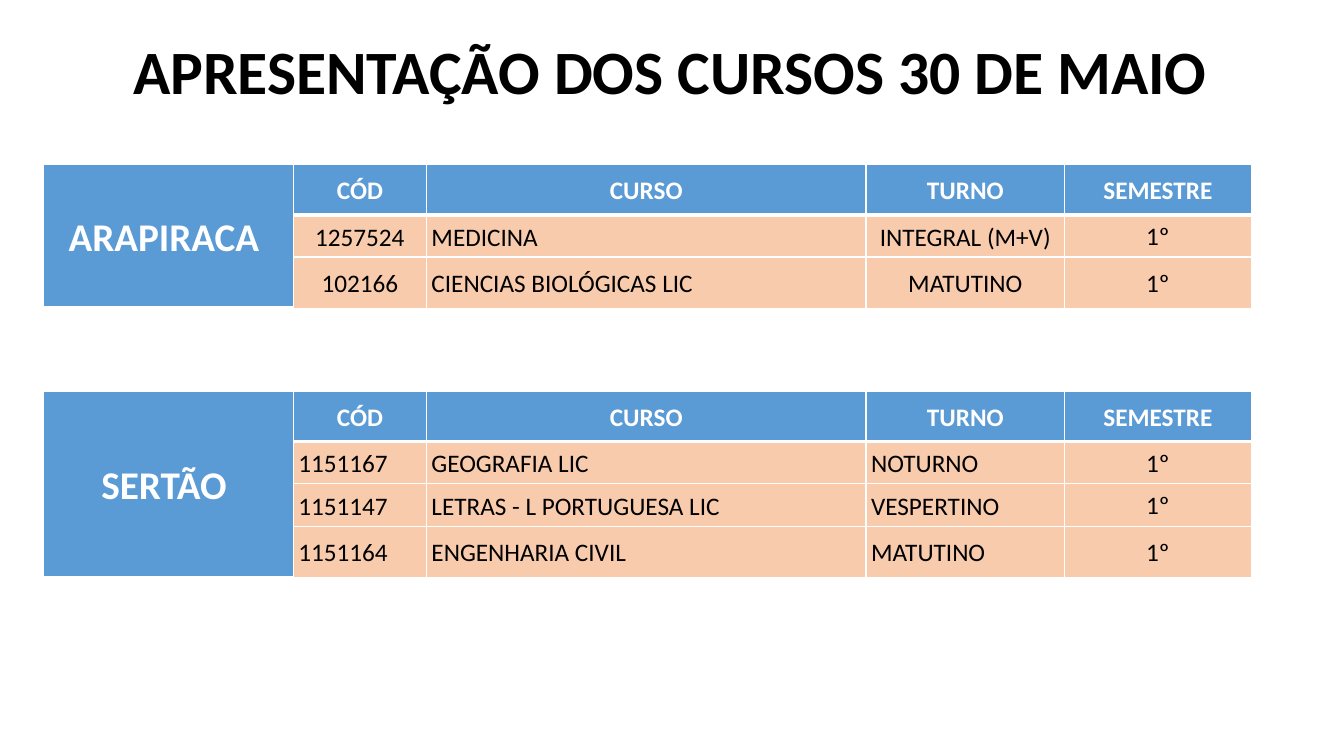
from dataclasses import dataclass

from lxml.etree import SubElement
from pptx import Presentation
from pptx.dml.color import RGBColor
from pptx.enum.text import MSO_ANCHOR as Anchor, MSO_AUTO_SIZE as AutoSize, PP_ALIGN as Align
from pptx.oxml.ns import qn
from pptx.slide import Slide
from pptx.table import _Cell as Cell
from pptx.text.text import TextFrame
from pptx.util import Inches, Pt


@dataclass(frozen=True)
class Theme:
    font: str = "Calibri"
    black: str = "000000"
    white: str = "FFFFFF"
    header: str = "5B9BD5"
    body: str = "F8CBAD"
    title_size: int = 44
    campus_size: int = 28
    table_size: int = 18
    thin: int = 1
    thick: int = 3


@dataclass(frozen=True)
class Campus:
    name: str
    top: float
    side_align: Align
    courses: tuple[tuple[str, str, str], ...]


THEME = Theme()
HEADINGS = ("CÓD", "CURSO", "TURNO", "SEMESTRE")
SEMESTER = "1º"
COLUMN_WIDTHS = (2.48, 1.32, 4.36, 1.97, 1.85)
TABLE_LEFT = 0.43
ROW_HEIGHT = 0.42
EDGE_ROW_HEIGHT = 0.5

CAMPUSES = (
    Campus("ARAPIRACA ", 1.63, Align.CENTER, (
        ("1257524", "MEDICINA", "INTEGRAL (M+V)"),
        ("102166", "CIENCIAS BIOLÓGICAS LIC", "MATUTINO"),
    )),
    Campus("SERTÃO ", 3.88, Align.LEFT, (
        ("1151167", "GEOGRAFIA LIC", "NOTURNO"),
        ("1151147", "LETRAS - L PORTUGUESA LIC", "VESPERTINO"),
        ("1151164", "ENGENHARIA CIVIL", "MATUTINO"),
    )),
)


def write_text(frame: TextFrame, text: str, *, size: int, color: str, bold: bool = False,
               align: Align = Align.CENTER, line_spacing: float = 1.07,
               space_after: float = 0) -> None:
    para = frame.paragraphs[0]
    para.alignment = align
    para.line_spacing = line_spacing
    para.space_before = Pt(0)
    para.space_after = Pt(space_after)
    span = para.add_run()
    span.text = text
    span.font.name = THEME.font
    span.font.size = Pt(size)
    span.font.bold = bold
    span.font.color.rgb = RGBColor.from_string(color)


def format_cell(cell: Cell, fill: str, *, top: int = THEME.thin, bottom: int = THEME.thin,
                margin_top: float = 0) -> None:
    cell.vertical_anchor = Anchor.MIDDLE
    cell.margin_left = cell.margin_right = Inches(0.05)
    cell.margin_top = Inches(margin_top)
    cell.margin_bottom = Inches(0)
    cell.fill.solid()
    cell.fill.fore_color.rgb = RGBColor.from_string(fill)
    properties = cell._tc.get_or_add_tcPr()
    widths = {"L": THEME.thin, "R": THEME.thin, "T": top, "B": bottom}
    for position, (side, width) in enumerate(widths.items()):
        line = SubElement(properties, qn(f"a:ln{side}"), w=str(Pt(width)))
        SubElement(SubElement(line, qn("a:solidFill")), qn("a:srgbClr"), val=THEME.white)
        properties.insert(position, line)


def add_title(page: Slide, text: str) -> None:
    title = page.shapes.title
    title.left, title.top = Inches(0.9), Inches(0.36)
    title.width, title.height = Inches(11.5), Inches(1.45)
    frame = title.text_frame
    frame.word_wrap = True
    frame.auto_size = AutoSize.NONE
    frame.vertical_anchor = Anchor.TOP
    write_text(frame, text, size=THEME.title_size, color=THEME.black, bold=True,
               line_spacing=0.9)


def add_campus_table(page: Slide, campus: Campus) -> None:
    count = len(campus.courses)
    heights = [EDGE_ROW_HEIGHT] + [ROW_HEIGHT] * (count - 1) + [EDGE_ROW_HEIGHT]
    table = page.shapes.add_table(
        len(heights), len(COLUMN_WIDTHS), Inches(TABLE_LEFT), Inches(campus.top),
        Inches(sum(COLUMN_WIDTHS)), Inches(sum(heights))).table
    table.horz_banding = False
    for column, width in zip(table.columns, COLUMN_WIDTHS):
        column.width = Inches(width)
    for row, height in zip(table.rows, heights):
        row.height = Inches(height)

    for index in range(len(heights)):
        format_cell(table.cell(index, 0), THEME.header, bottom=THEME.thick)
    name_cell = table.cell(0, 0)
    name_cell.merge(table.cell(count, 0))
    write_text(name_cell.text_frame, campus.name, size=THEME.campus_size,
               color=THEME.white, bold=True)

    for index, heading in enumerate(HEADINGS, 1):
        cell = table.cell(0, index)
        format_cell(cell, THEME.header, bottom=THEME.thick)
        write_text(cell.text_frame, heading, size=THEME.table_size,
                   color=THEME.white, bold=True)

    aligns = (campus.side_align, Align.LEFT, campus.side_align, Align.CENTER)
    for row_index, course in enumerate(campus.courses, 1):
        top = THEME.thick if row_index == 1 else THEME.thin
        for index, (text, align) in enumerate(zip((*course, SEMESTER), aligns), 1):
            cell = table.cell(row_index, index)
            is_semester = index == len(HEADINGS)
            format_cell(cell, THEME.body, top=top, margin_top=0 if is_semester else 0.01)
            write_text(cell.text_frame, text, size=THEME.table_size, color=THEME.black,
                       align=align, space_after=0 if is_semester else 8)


def main() -> None:
    deck = Presentation()
    deck.slide_width, deck.slide_height = Inches(13.33), Inches(7.5)
    page = deck.slides.add_slide(deck.slide_layouts[5])
    add_title(page, "APRESENTAÇÃO DOS CURSOS 30 DE MAIO")
    for campus in CAMPUSES:
        add_campus_table(page, campus)
    deck.save("out.pptx")


if __name__ == "__main__":
    main()
